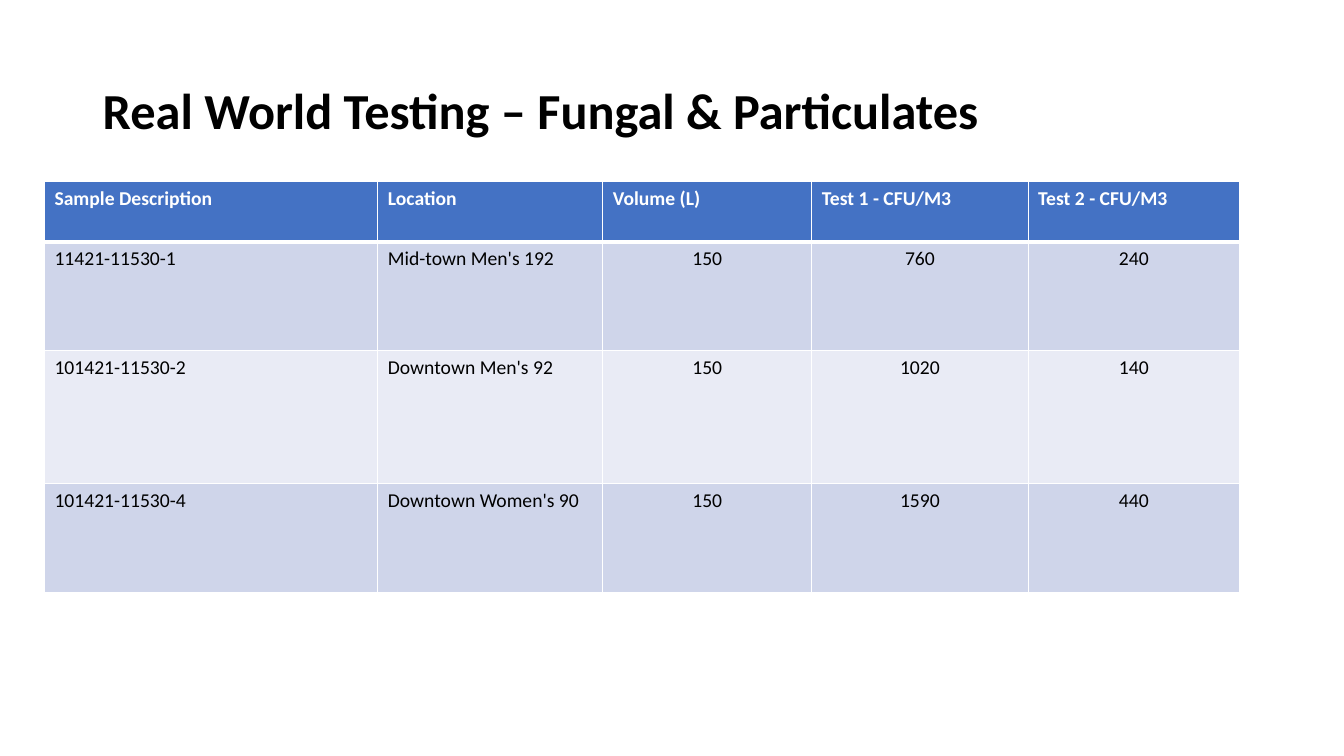
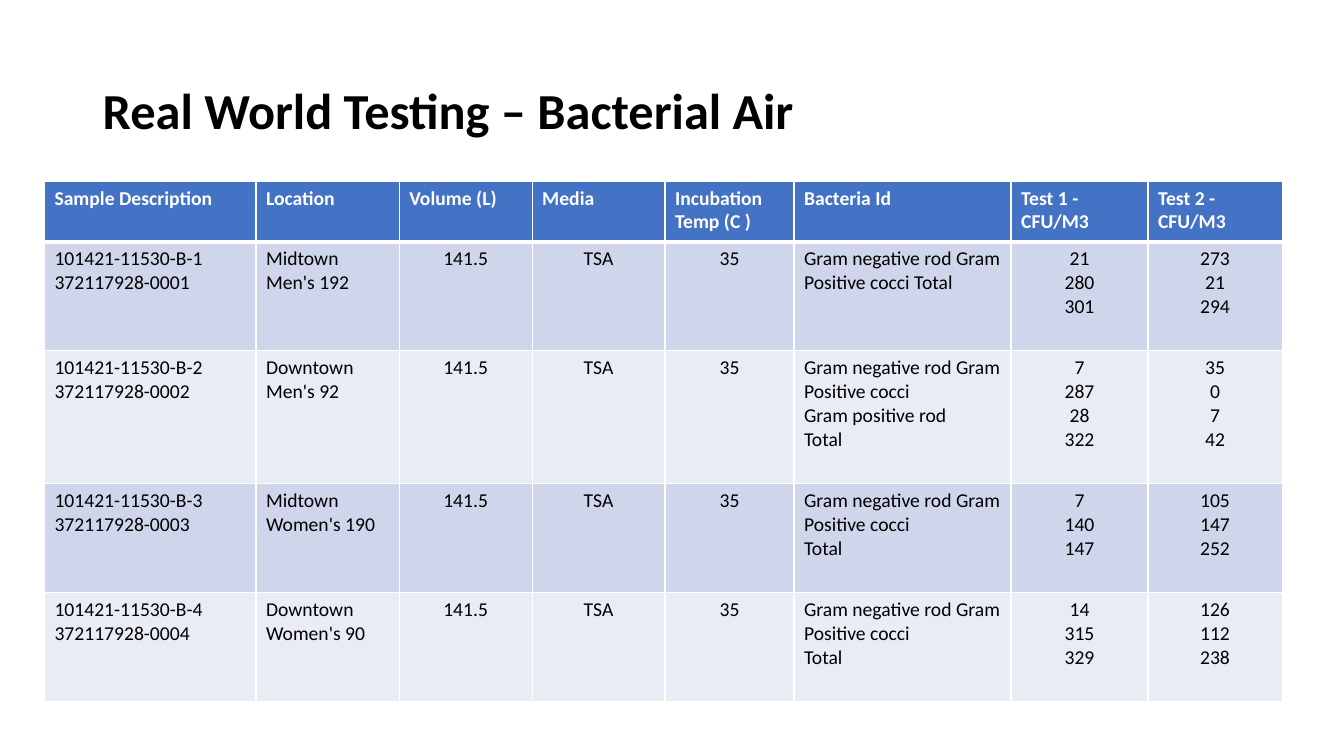
import pptx
import pptx.dml.color
import pptx.enum.text
import pptx.oxml
import pptx.oxml.ns
import pptx.util

Cm = pptx.util.Cm
Pt = pptx.util.Pt
ALIGN = pptx.enum.text.PP_ALIGN

COLOURS = {
    "heading": "4472C4",
    "odd": "CFD5EA",
    "even": "E9EBF5",
    "rule": "FFFFFF",
    "light": "FFFFFF",
    "dark": "000000",
}
FONT = "Calibri"
TITLE_STYLE = {"name": FONT, "size": Pt(36), "bold": True}
HEADING_STYLE = {"name": FONT, "size": Pt(14), "bold": True}
RESULT_STYLE = {"name": FONT, "size": Pt(14), "bold": False}
TITLE_AREA = (Cm(2.34), Cm(1.02), Cm(23.37), Cm(3.68))
TABLE_LEFT, TABLE_TOP = Cm(1.12), Cm(4.57)
ROW_HEIGHTS = (1.52, 2.75, 3.35, 2.75, 2.75)
THIN, THICK = 1, 3

REPORTS = [
    {
        "title": "Real World Testing – Fungal & Particulates",
        "columns": [
            ("Sample Description", 8.4, ALIGN.LEFT),
            ("Location", 5.67, ALIGN.LEFT),
            ("Volume (L)", 5.27, ALIGN.CENTER),
            ("Test 1 - CFU/M3", 5.45, ALIGN.CENTER),
            ("Test 2 - CFU/M3", 5.33, ALIGN.CENTER),
        ],
        "samples": [
            ("11421-11530-1", "Mid-town Men's 192", "150", "760", "240"),
            ("101421-11530-2", "Downtown Men's 92", "150", "1020", "140"),
            ("101421-11530-4", "Downtown Women's 90", "150", "1590", "440"),
        ],
    },
    {
        "title": "Real World Testing – Bacterial Air",
        "columns": [
            ("Sample Description", 5.33, ALIGN.LEFT),
            ("Location", 3.61, ALIGN.LEFT),
            ("Volume (L)", 3.35, ALIGN.CENTER),
            ("Media", 3.35, ALIGN.CENTER),
            ("Incubation Temp (C )", 3.25, ALIGN.CENTER),
            ("Bacteria Id", 5.47, ALIGN.LEFT),
            ("Test 1 - CFU/M3", 3.45, ALIGN.CENTER),
            ("Test 2 - CFU/M3", 3.38, ALIGN.CENTER),
        ],
        "samples": [
            ("101421-11530-B-1 372117928-0001", "Midtown Men's 192", "141.5", "TSA", "35",
             "Gram negative rod Gram Positive cocci Total",
             "21\n280\n301", "273\n21\n294"),
            ("101421-11530-B-2 372117928-0002", "Downtown Men's 92", "141.5", "TSA", "35",
             "Gram negative rod Gram Positive cocci\nGram positive rod\nTotal",
             "7\n287\n28\n322", "35\n0\n7\n42"),
            ("101421-11530-B-3 372117928-0003", "Midtown Women's 190", "141.5", "TSA", "35",
             "Gram negative rod Gram Positive cocci\nTotal",
             "7\n140\n147", "105\n147\n252"),
            ("101421-11530-B-4 372117928-0004", "Downtown Women's 90", "141.5", "TSA", "35",
             "Gram negative rod Gram Positive cocci\nTotal",
             "14\n315\n329", "126\n112\n238"),
        ],
    },
]


def colour(key):
    return pptx.dml.color.RGBColor.from_string(COLOURS[key])


def style_text(frame, style, ink, alignment):
    for paragraph in frame.paragraphs:
        paragraph.alignment = alignment
        for run in paragraph.runs:
            for attribute, value in style.items():
                setattr(run.font, attribute, value)
            run.font.color.rgb = colour(ink)


def rule_cell(cell, top, bottom):
    properties = cell._tc.get_or_add_tcPr()
    for side, points in (("L", THIN), ("R", THIN), ("T", top), ("B", bottom)):
        properties.append(pptx.oxml.parse_xml(
            f'<a:ln{side} {pptx.oxml.ns.nsdecls("a")} w="{Pt(points)}">'
            f'<a:solidFill><a:srgbClr val="{COLOURS["rule"]}"/></a:solidFill></a:ln{side}>'))


def add_results(slide, columns, samples):
    headings, widths, alignments = zip(*columns)
    rows = [headings, *samples]
    heights = ROW_HEIGHTS[:len(rows)]
    results = slide.shapes.add_table(
        len(rows), len(columns), TABLE_LEFT, TABLE_TOP, Cm(sum(widths)), Cm(sum(heights))).table
    for column, width in zip(results.columns, widths):
        column.width = Cm(width)
    for row, height in zip(results.rows, heights):
        row.height = Cm(height)
    for r, texts in enumerate(rows):
        is_heading = r == 0
        band = "heading" if is_heading else "odd" if r % 2 else "even"
        for c, text in enumerate(texts):
            cell = results.cell(r, c)
            cell.text = text
            rule_cell(cell, THICK if r == 1 else THIN, THICK if is_heading else THIN)
            cell.fill.solid()
            cell.fill.fore_color.rgb = colour(band)
            if is_heading:
                style_text(cell.text_frame, HEADING_STYLE, "light", ALIGN.LEFT)
            else:
                style_text(cell.text_frame, RESULT_STYLE, "dark", alignments[c])


def add_title(slide, text):
    frame = slide.shapes.add_textbox(*TITLE_AREA).text_frame
    frame.word_wrap = True
    frame.vertical_anchor = pptx.enum.text.MSO_ANCHOR.MIDDLE
    frame.text = text
    frame.paragraphs[0].line_spacing = 0.9
    style_text(frame, TITLE_STYLE, "dark", ALIGN.LEFT)


def main():
    deck = pptx.Presentation()
    deck.slide_width, deck.slide_height = Cm(33.87), Cm(19.05)
    for report in REPORTS:
        slide = deck.slides.add_slide(deck.slide_layouts[6])
        add_results(slide, report["columns"], report["samples"])
        add_title(slide, report["title"])
    deck.save("out.pptx")


if __name__ == "__main__":
    main()
